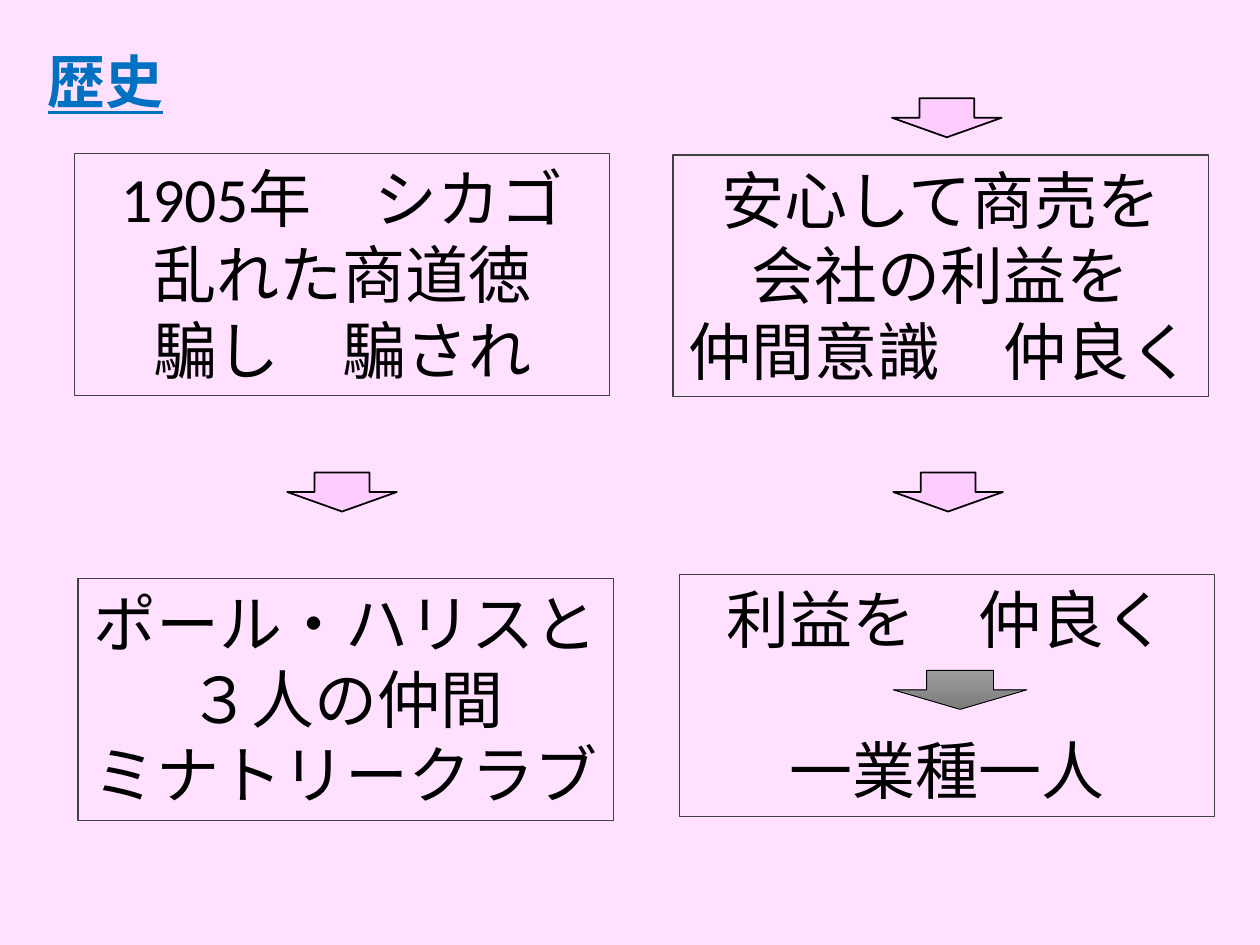
from dataclasses import dataclass

from pptx import Presentation
from pptx.dml.color import RGBColor
from pptx.enum import shapes, text
from pptx.util import Inches, Pt


@dataclass(frozen=True)
class Theme:
    """Colours, font and type sizes of the slide."""
    font: str = "Calibri"
    background: str = "FFE1FF"
    title: str = "0070C0"
    ink: str = "000000"
    border: str = "404040"
    arrow: str = "FFCCFF"
    gradient: tuple = ("9D9D9D", "7C7C7C")
    title_size: int = 33
    body_size: int = 36
    line_skip: int = 43


THEME = Theme()
BOX_W, BOX_H = 4.25, 1.92
ARROW_W, ARROW_H = 0.87, 0.31
BOXES = [
    (0.59, 1.22, ["1905年　シカゴ", "乱れた商道徳", "騙し　騙され"]),
    (0.62, 4.59, ["ポール・ハリスと", "３人の仲間", "ミナトリークラブ"]),
    (5.34, 1.23, ["安心して商売を", "会社の利益を", "仲間意識　仲良く"]),
]
ARROWS = [(2.28, 3.75), (7.08, 0.78), (7.09, 3.75)]


def rgb(value):
    """Return the colour for a hex string."""
    return RGBColor.from_string(value)


def add_run(p, words, size, color, bold=None, underline=None):
    """Add one styled run to a paragraph."""
    r = p.add_run()
    r.text = words
    f = r.font
    f.name, f.size, f.bold, f.underline = THEME.font, Pt(size), bold, underline
    f.color.rgb = rgb(color)


def add_title(s, words):
    """Add the underlined slide heading."""
    sp = s.shapes.add_textbox(Inches(0.28), Inches(0.22), Inches(8.62), Inches(0.91))
    tf = sp.text_frame
    tf.word_wrap = True
    tf.vertical_anchor = text.MSO_ANCHOR.MIDDLE
    p = tf.paragraphs[0]
    p.line_spacing = 0.9
    add_run(p, words, THEME.title_size, THEME.title, bold=True, underline=True)


def add_box(s, x, y, lines, gap=0):
    """Add an outlined box of centred lines, with a gap between them."""
    sp = s.shapes.add_textbox(Inches(x), Inches(y), Inches(BOX_W), Inches(BOX_H))
    sp.line.color.rgb = rgb(THEME.border)
    sp.line.width = Pt(0.75)
    tf = sp.text_frame
    tf.word_wrap = True
    tf.auto_size = text.MSO_AUTO_SIZE.SHAPE_TO_FIT_TEXT
    for i, line in enumerate(lines):
        p = tf.add_paragraph() if i else tf.paragraphs[0]
        p.alignment = text.PP_ALIGN.CENTER
        if i and gap:
            p.space_before = Pt(gap)
        add_run(p, line, THEME.body_size, THEME.ink)


def add_arrow(s, x, y, width=ARROW_W, line_width=1, gradient=None):
    """Add a down arrow with a plain or vertical gradient fill."""
    sp = s.shapes.add_shape(shapes.MSO_SHAPE.DOWN_ARROW, Inches(x), Inches(y),
                            Inches(width), Inches(ARROW_H))
    sp.shadow.inherit = False
    sp.line.color.rgb = rgb(THEME.ink)
    sp.line.width = Pt(line_width)
    if gradient:
        sp.fill.gradient()
        sp.fill.gradient_angle = 270
        for stop, color in zip(sp.fill.gradient_stops, gradient):
            stop.color.rgb = rgb(color)
    else:
        sp.fill.solid()
        sp.fill.fore_color.rgb = rgb(THEME.arrow)


def main():
    """Build and save the history slide."""
    prs = Presentation()
    prs.slide_width, prs.slide_height = Inches(10), Inches(7.5)
    s = prs.slides.add_slide(prs.slide_layouts[6])
    s.background.fill.solid()
    s.background.fill.fore_color.rgb = rgb(THEME.background)
    add_title(s, "歴史")
    for x, y in ARROWS:
        add_arrow(s, x, y)
    for x, y, lines in BOXES:
        add_box(s, x, y, lines)
    add_box(s, 5.39, 4.56, ["利益を　仲良く", "一業種一人"], gap=THEME.line_skip)
    add_arrow(s, 7.09, 5.32, width=1.06, line_width=0.5, gradient=THEME.gradient)
    prs.save("out.pptx")


if __name__ == "__main__":
    main()
